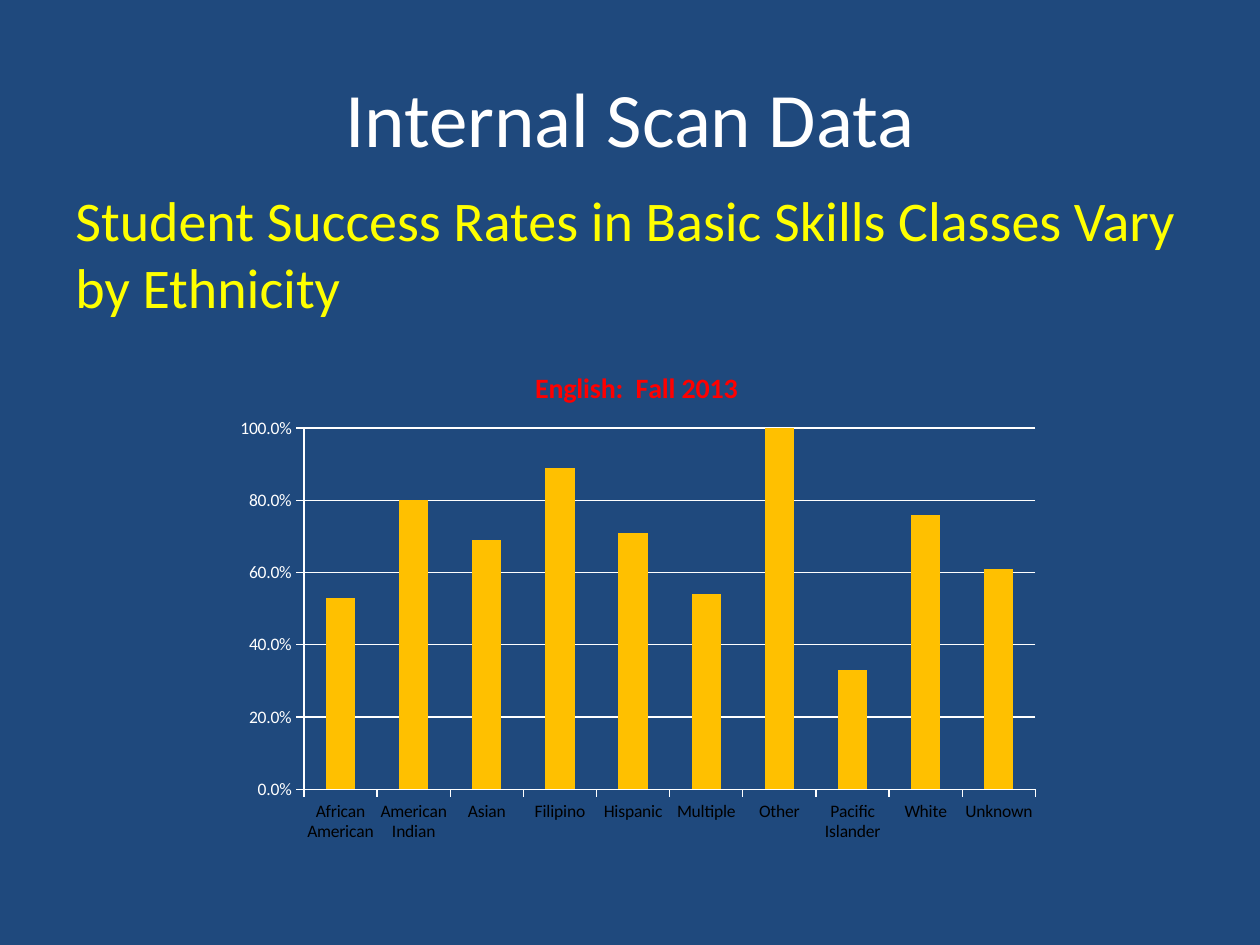
"""Build the slide on student success rates in basic skills classes."""
from lxml import etree
from pptx import Presentation
from pptx import util as u
from pptx.chart.data import CategoryChartData
from pptx.dml.color import RGBColor
from pptx.enum import chart as ch, text
from pptx.oxml.ns import qn

HEADING = "Internal Scan Data"
FINDING = "Student Success Rates in Basic Skills Classes Vary by Ethnicity"
CHART_TITLE = "English:  Fall 2013"
SUCCESS_RATES = {
    "African American": 0.53,
    "American Indian": 0.8,
    "Asian": 0.69,
    "Filipino": 0.89,
    "Hispanic": 0.71,
    "Multiple": 0.54,
    "Other": 1,
    "Pacific Islander": 0.33,
    "White": 0.76,
    "Unknown": 0.61,
}
BOXES = {
    "heading": (1.27, 0.76, 22.86, 3.18),
    "finding": (1.27, 3.61, 22.86, 3.2),
    "rates": (4.45, 6.99, 16.76, 10.26),
}
PLOT_AREA = {"x": 0.1, "y": 0.16, "w": 0.88, "h": 0.71}
THEME = {
    "font": "Calibri",
    "background": "1F497D",
    "heading": (44, "FFFFFF"),
    "finding": (32, "FFFF00"),
    "chart title": (16, "FF0000"),
    "values": (10, "FFFFFF"),
    "categories": (10, "000000"),
    "lines": "FFFFFF",
    "bars": "FFC000",
}


def box(part):
    return [u.Cm(length) for length in BOXES[part]]


def color(part):
    return RGBColor.from_string(THEME[part])


def style_font(font, part, bold=False):
    size, rgb = THEME[part]
    font.name, font.size, font.bold = THEME["font"], u.Pt(size), bold
    font.color.rgb = RGBColor.from_string(rgb)


def fill_text(shape, words, part, align, anchor):
    shape.left, shape.top, shape.width, shape.height = box(part)
    frame = shape.text_frame
    frame.text = words
    frame.word_wrap = True
    frame.auto_size = text.MSO_AUTO_SIZE.NONE
    frame.vertical_anchor = anchor
    frame.paragraphs[0].alignment = align
    style_font(frame.paragraphs[0].font, part)


def style_line(line):
    line.color.rgb = color("lines")
    line.width = u.Pt(0.75)


def place_plot(chart):
    plot_area = chart.plots[0]._element.getparent()
    for old in plot_area.findall(qn("c:layout")):
        plot_area.remove(old)
    layout = etree.Element(qn("c:layout"))
    plot_area.insert(0, layout)
    manual = etree.SubElement(layout, qn("c:manualLayout"))
    settings = {"layoutTarget": "inner", "xMode": "edge", "yMode": "edge", **PLOT_AREA}
    for tag, value in settings.items():
        etree.SubElement(manual, qn(f"c:{tag}")).set("val", str(value))


def add_rates(slide):
    data = CategoryChartData(number_format="0.0%")
    data.categories = list(SUCCESS_RATES)
    data.add_series("Series 1", list(SUCCESS_RATES.values()))
    chart = slide.shapes.add_chart(
        ch.XL_CHART_TYPE.COLUMN_CLUSTERED, *box("rates"), data).chart
    style_font(chart.font, "values")
    chart.has_legend = False
    chart.has_title = True
    chart.chart_title.include_in_layout = False
    chart.chart_title.text_frame.text = CHART_TITLE
    style_font(chart.chart_title.text_frame.paragraphs[0].font, "chart title", bold=True)

    bars = chart.plots[0]
    bars.gap_width = 150
    bars.vary_by_categories = False
    bars.series[0].format.fill.solid()
    bars.series[0].format.fill.fore_color.rgb = color("bars")

    for axis, part in ((chart.category_axis, "categories"), (chart.value_axis, "values")):
        style_font(axis.tick_labels.font, part)
        style_line(axis.format.line)
        axis.major_tick_mark = ch.XL_TICK_MARK.OUTSIDE
        axis.minor_tick_mark = ch.XL_TICK_MARK.NONE

    rate_axis = chart.value_axis
    rate_axis.minimum_scale, rate_axis.maximum_scale, rate_axis.major_unit = 0, 1, 0.2
    rate_axis.tick_labels.number_format = "0.0%"
    rate_axis.tick_labels.number_format_is_linked = False
    rate_axis.has_major_gridlines = True
    style_line(rate_axis.major_gridlines.format.line)
    place_plot(chart)


def main():
    deck = Presentation()
    deck.slide_width, deck.slide_height = u.Cm(25.4), u.Cm(19.05)
    slide = deck.slides.add_slide(deck.slide_layouts.get_by_name("Title Only"))
    slide.background.fill.solid()
    slide.background.fill.fore_color.rgb = color("background")
    fill_text(slide.shapes.title, HEADING, "heading",
              text.PP_ALIGN.CENTER, text.MSO_ANCHOR.MIDDLE)
    finding = slide.shapes.add_textbox(*box("finding"))
    fill_text(finding, FINDING, "finding", text.PP_ALIGN.LEFT, text.MSO_ANCHOR.TOP)
    add_rates(slide)
    deck.save("out.pptx")


if __name__ == "__main__":
    main()
